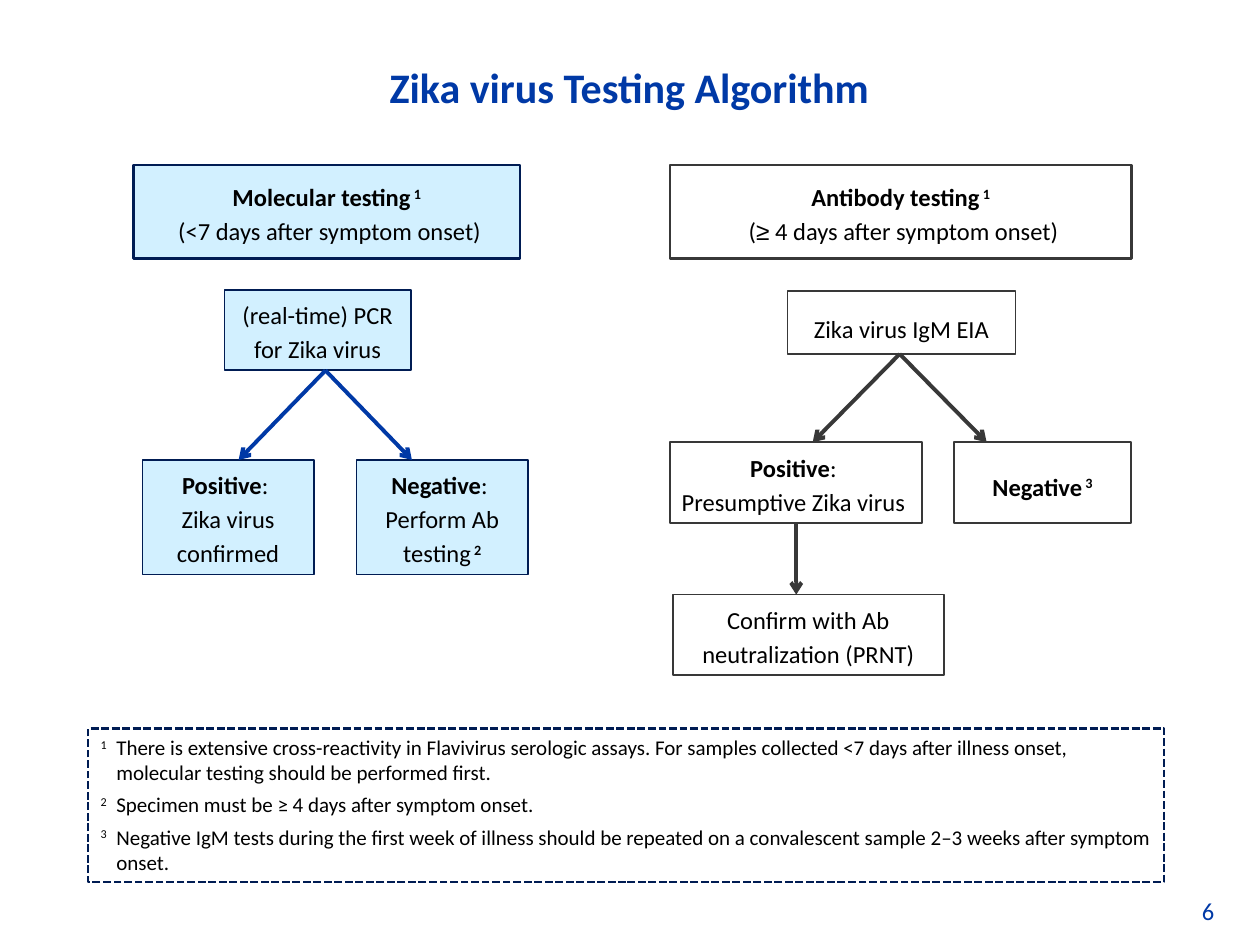
from pptx import Presentation
from pptx.dml.color import RGBColor
from pptx.enum.dml import MSO_LINE
from pptx.enum.shapes import MSO_CONNECTOR, MSO_SHAPE
from pptx.enum.text import MSO_ANCHOR, PP_ALIGN
from pptx.oxml.ns import qn
from pptx.util import Pt
from lxml.etree import SubElement

BLUE, NAVY, PALE, GREY, WHITE, BLACK = "0039A6", "001C53", "D2F0FF", "383838", "FFFFFF", "000000"
BOLD = {"bold": True}
RAISED = {"raised": True}
BOLD_RAISED = {"bold": True, "raised": True}


def color(value):
    """Turn a hex string into a colour."""
    return RGBColor.from_string(value)


def apply(target, values):
    """Set every attribute named in a dict of format values."""
    for name, value in values.items():
        setattr(target, name, value)


def add_span(para, text, size, ink=BLACK, bold=False, raised=False, font="Calibri"):
    """Append one formatted run to a paragraph."""
    span = para.add_run()
    span.text = text
    apply(span.font, {"name": font, "size": Pt(size), "bold": bold})
    span.font.color.rgb = color(ink)
    if raised:
        span.font._element.set("baseline", "30000")


def write(shape, paragraphs, size, layout, insets=(7.2, 3.6, 7.2, 3.6),
          anchor=MSO_ANCHOR.TOP, wrap=True, ink=BLACK):
    """Fill a shape with paragraphs of (text, style) spans."""
    frame = shape.text_frame
    sides = ("margin_left", "margin_top", "margin_right", "margin_bottom")
    apply(frame, {side: Pt(inset) for side, inset in zip(sides, insets)})
    apply(frame, {"word_wrap": wrap, "vertical_anchor": anchor})
    for index, spans in enumerate(paragraphs):
        para = frame.paragraphs[0] if index == 0 else frame.add_paragraph()
        apply(para, layout)
        for text, style in spans:
            add_span(para, text, size, **{"ink": ink, **style})
    return frame


def add_label(page, bounds, text, size, layout, **options):
    """Add a blue line of text without an outline."""
    box = page.shapes.add_textbox(*map(Pt, bounds))
    write(box, [[(text, options.pop("style", {}))]], size, layout, ink=BLUE, **options)


def add_frame(page, bounds, outline, width, fill=None):
    """Add an outlined rectangle, filled when a fill is given."""
    box = page.shapes.add_shape(MSO_SHAPE.RECTANGLE, *map(Pt, bounds))
    box.shadow.inherit = False
    box.line.color.rgb = color(outline)
    box.line.width = Pt(width)
    if fill:
        box.fill.solid()
        box.fill.fore_color.rgb = color(fill)
    else:
        box.fill.background()
    return box


def add_step(page, bounds, paragraphs, theme, width=1, top=3.6, bottom=3.6):
    """Add one box of a testing flow."""
    box = add_frame(page, bounds, theme["outline"], width, theme["fill"])
    layout = {"alignment": PP_ALIGN.CENTER, "line_spacing": 1.15}
    write(box, paragraphs, 14, layout, (3.6, top, 3.6, bottom))


def add_arrow(page, start, end, theme):
    """Add a straight line with an open arrowhead at its end."""
    arrow = page.shapes.add_connector(MSO_CONNECTOR.STRAIGHT, *map(Pt, start + end))
    arrow.line.color.rgb = color(theme["arrow"])
    arrow.line.width = Pt(2.25)
    SubElement(arrow.line._get_or_add_ln(), qn("a:tailEnd"), type="arrow")
    SubElement(arrow._element.spPr, qn("a:effectLst"))


def add_footnotes(page, notes):
    """Add the dashed box of numbered notes with hanging indents."""
    box = add_frame(page, (50.4, 416.2, 614.9, 87.8), NAVY, 1.5)
    box.line.dash_style = MSO_LINE.SQUARE_DOT
    paragraphs = [[(str(number), RAISED), ("\t" + note, {})]
                  for number, note in enumerate(notes, 1)]
    frame = write(box, paragraphs, 12, {"alignment": PP_ALIGN.LEFT})
    for index, para in enumerate(frame.paragraphs):
        para.space_before = Pt(4 if index else 0)
        properties = para._p.get_or_add_pPr()
        properties.set("marL", str(Pt(9)))
        properties.set("indent", str(Pt(-9)))


def add_molecular_flow(page):
    """Draw the molecular testing branch."""
    theme = {"outline": NAVY, "fill": PALE, "arrow": BLUE}
    add_step(page, (76.3, 94.3, 221, 53.3),
             [[("Molecular testing", BOLD), (" 1", BOLD_RAISED)],
              [(" (<7 days after symptom onset)", {})]], theme, 1.5, 7.2, 7.2)
    add_step(page, (128.2, 165.6, 106.6, 46.1),
             [[("(real-time) PCR for Zika virus", {})]], theme)
    results = (("Positive", [("Zika virus confirmed", {})]),
               ("Negative", [("Perform Ab testing", {}), (" 2", BOLD_RAISED)]))
    for index, (result, action) in enumerate(results):
        add_step(page, (81.4 + 122.4 * index, 262.8, 97.9, 65.5),
                 [[(result, BOLD), (": ", {})], action], theme)
    for end in (136.4, 235.4):
        add_arrow(page, (186, 211.7), (end, 262.8), theme)


def add_antibody_flow(page):
    """Draw the antibody testing branch."""
    theme = {"outline": GREY, "fill": WHITE, "arrow": GREY}
    add_step(page, (383, 94.3, 263.5, 53.3),
             [[("Antibody testing", BOLD), (" 1", BOLD_RAISED)],
              [(" (", {}), ("≥", {"font": "Arial"}), (" 4 days after symptom onset)", {})]],
             theme, 1.5, 7.2, 7.2)
    add_step(page, (450, 166.3, 130.3, 36), [[("Zika virus IgM EIA", {})]], theme, top=10.8)
    add_step(page, (383, 252.7, 144, 46.1),
             [[("Positive", BOLD), (": ", {})], [("Presumptive Zika virus ", {})]], theme)
    add_step(page, (545, 252.7, 101.5, 46.1),
             [[("Negative", BOLD), (" 3", BOLD_RAISED)]], theme, top=14.4)
    add_step(page, (384.5, 339.8, 154.8, 46.1),
             [[("Confirm with Ab neutralization (PRNT)", {})]], theme)
    for end in (464.4, 563.8):
        add_arrow(page, (514.1, 202.3), (end, 252.7), theme)
    add_arrow(page, (455, 298.8), (455, 339.8), theme)


def main():
    """Build the testing algorithm slide."""
    deck = Presentation()
    apply(deck, {"slide_width": Pt(720), "slide_height": Pt(540)})
    page = deck.slides.add_slide(deck.slide_layouts[6])
    add_label(page, (679.7, 508.3, 31, 24.5), "6", 14, {"alignment": PP_ALIGN.LEFT}, wrap=False)
    add_label(page, (35.3, 23, 648.7, 53.3), "Zika virus Testing Algorithm", 24,
              {"alignment": PP_ALIGN.CENTER}, style=BOLD, anchor=MSO_ANCHOR.MIDDLE)
    add_footnotes(page, [
        "There is extensive cross-reactivity in Flavivirus serologic assays. For samples "
        "collected <7 days after illness onset, molecular testing should be performed first.",
        "Specimen must be ≥ 4 days after symptom onset.",
        "Negative IgM tests during the first week of illness should be repeated on a "
        "convalescent sample 2–3 weeks after symptom onset."])
    add_molecular_flow(page)
    add_antibody_flow(page)
    deck.save("out.pptx")


if __name__ == "__main__":
    main()
